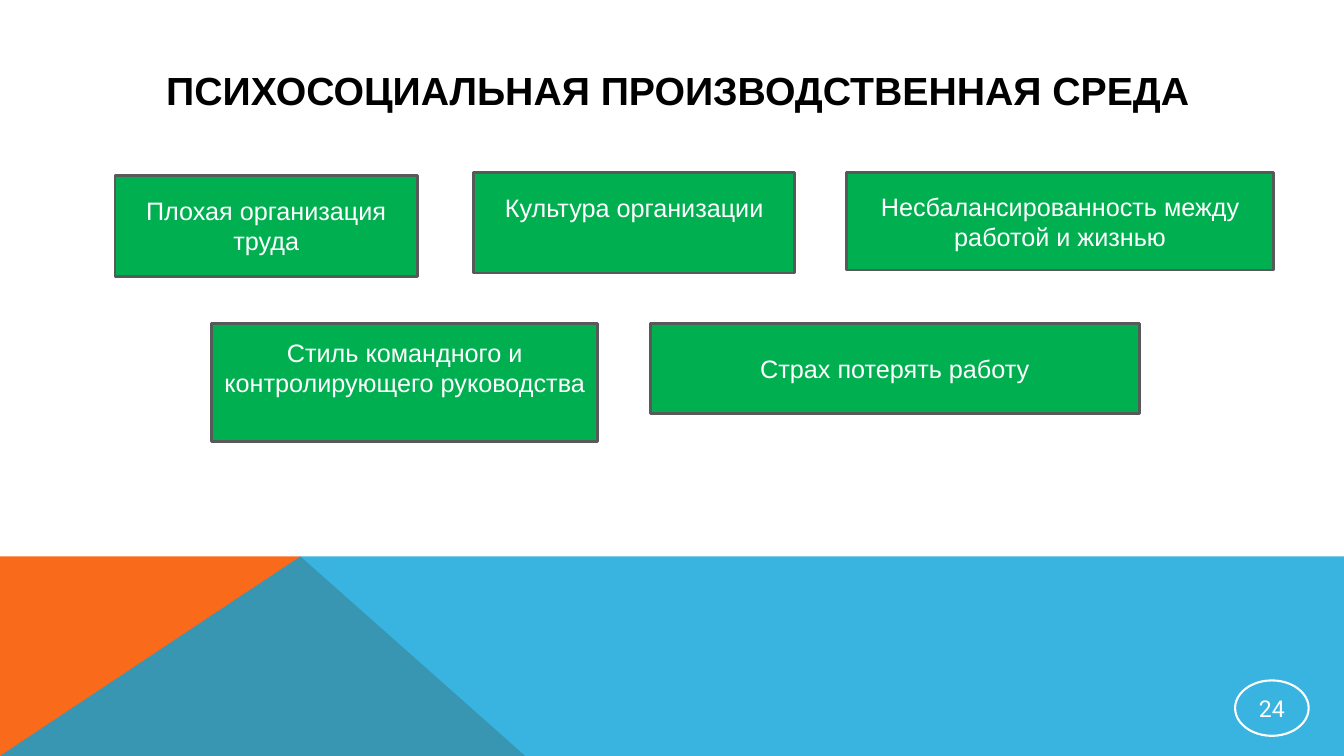
from dataclasses import dataclass

from lxml import etree
from pptx import Presentation
from pptx import util as u
from pptx.dml import color
from pptx.enum import shapes, text
from pptx.oxml import ns


@dataclass(frozen=True)
class Theme:
    """Colours, fonts and type sizes of the slide."""
    orange: str = "F96A1B"
    blue: str = "08A1D9"
    green: str = "00B050"
    grey: str = "58595B"
    black: str = "000000"
    white: str = "FFFFFF"
    font: str = "Arial"
    number_font: str = "Roboto"
    title_size: float = 28
    factor_size: float = 18
    number_size: float = 16.5


THEME = Theme()
WIDTH, HEIGHT, BAND_TOP = 13.33, 7.5, 5.52
INSETS = (0.1, 0.05, 0.1, 0.05)
SPARE_LINE_INSETS = (0.1, 0.05, 0.1, 0.35)
FACTORS = [
    ("Плохая организация труда", (1.14, 1.74, 3, 1), INSETS),
    ("Культура организации", (4.7, 1.71, 3.18, 1), SPARE_LINE_INSETS),
    ("Стиль командного и контролирующего руководства",
     (2.1, 3.21, 3.83, 1.17), SPARE_LINE_INSETS),
    ("Несбалансированность между работой и жизнью",
     (8.4, 1.71, 4.23, 0.97), INSETS),
    ("Страх потерять работу", (6.45, 3.21, 4.85, 0.89), INSETS),
]


def apply_format(target, values):
    """Set each named attribute of the target."""
    for name, value in values.items():
        setattr(target, name, value)


def write_text(shape, words, size, ink, font=THEME.font, bold=False, insets=INSETS):
    """Write one centred paragraph in the middle of a shape."""
    frame = shape.text_frame
    frame.text = words
    sides = ("margin_left", "margin_top", "margin_right", "margin_bottom")
    apply_format(frame, dict(zip(sides, map(u.Inches, insets))))
    apply_format(frame, {
        "word_wrap": True,
        "auto_size": text.MSO_AUTO_SIZE.NONE,
        "vertical_anchor": text.MSO_ANCHOR.MIDDLE,
    })
    paragraph = frame.paragraphs[0]
    paragraph.alignment = text.PP_ALIGN.CENTER
    run_font = paragraph.runs[0].font
    apply_format(run_font, {"name": font, "size": u.Pt(size), "bold": bold})
    run_font.color.rgb = color.RGBColor.from_string(ink)


def paint(shape, fill=None, line=None, width=0):
    """Give a shape its fill and outline, without a shadow."""
    shape.shadow.inherit = False
    for part, ink in ((shape.fill, fill), (shape.line.fill, line)):
        if ink:
            part.solid()
            part.fore_color.rgb = color.RGBColor.from_string(ink)
        else:
            part.background()
    if line:
        shape.line.width = u.Pt(width)


def add_band(slide, points, fill, opacity=100):
    """Draw a closed polygon of the footer band."""
    start, *corners = [tuple(map(u.Inches, point)) for point in points]
    builder = slide.shapes.build_freeform(*start)
    builder.add_line_segments(corners, close=True)
    shape = builder.convert_to_shape()
    paint(shape, fill)
    if opacity < 100:
        tint = shape.fill._xPr.find(".//" + ns.qn("a:srgbClr"))
        etree.SubElement(tint, ns.qn("a:alpha"), val=str(opacity * 1000))


def add_title(slide, words, box):
    """Place and format the title placeholder."""
    title = slide.shapes.title
    apply_format(title, dict(zip(("left", "top", "width", "height"), map(u.Inches, box))))
    write_text(title, words, THEME.title_size, THEME.black, bold=True)


def add_factor(slide, words, box, insets):
    """Add a green box that names one factor."""
    shape = slide.shapes.add_shape(shapes.MSO_SHAPE.RECTANGLE, *map(u.Inches, box))
    paint(shape, THEME.green, THEME.grey, 2)
    write_text(shape, words, THEME.factor_size, THEME.white, insets=insets)


def add_page_number(slide, number, box):
    """Add the page number in an outlined oval."""
    shape = slide.shapes.add_shape(shapes.MSO_SHAPE.OVAL, *map(u.Inches, box))
    paint(shape, line=THEME.white, width=1.5)
    write_text(shape, number, THEME.number_size, THEME.white,
               font=THEME.number_font, insets=(0.01,) * 4)


def main():
    """Build the slide and save it."""
    presentation = Presentation()
    apply_format(presentation, {
        "slide_width": u.Inches(WIDTH),
        "slide_height": u.Inches(HEIGHT),
    })
    slide = presentation.slides.add_slide(presentation.slide_layouts[5])
    add_band(slide, [(0, HEIGHT), (0, BAND_TOP), (2.98, BAND_TOP), (5.21, HEIGHT)],
             THEME.orange)
    add_band(slide, [(0, HEIGHT), (2.98, BAND_TOP), (WIDTH, BAND_TOP), (WIDTH, HEIGHT)],
             THEME.blue, opacity=80)
    add_title(slide, "ПСИХОСОЦИАЛЬНАЯ ПРОИЗВОДСТВЕННАЯ СРЕДА", (0.48, 0.55, 12.48, 0.68))
    for words, box, insets in FACTORS:
        add_factor(slide, words, box, insets)
    add_page_number(slide, "24", (12.25, 6.75, 0.73, 0.55))
    presentation.save("out.pptx")


if __name__ == "__main__":
    main()
